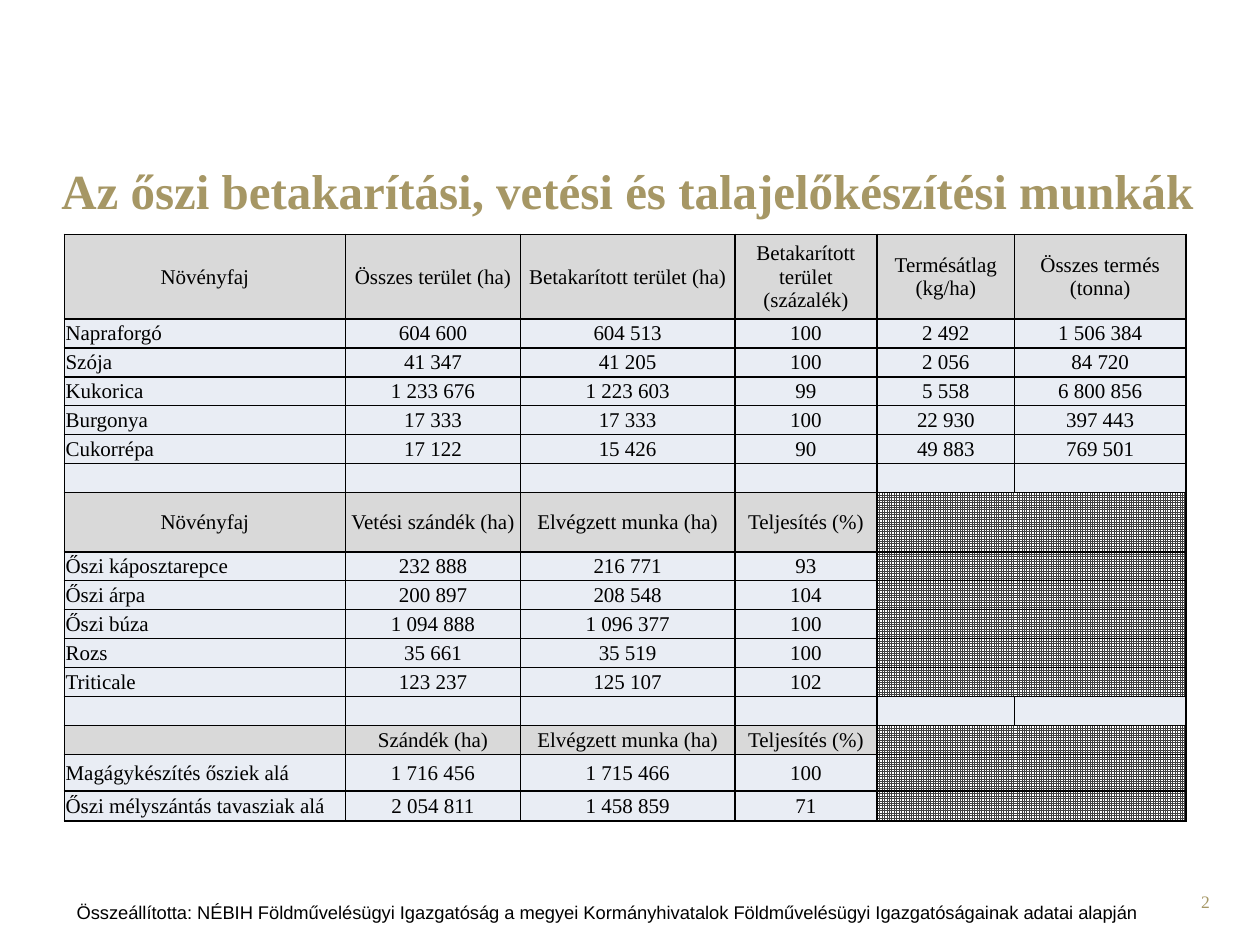
from lxml import etree
from pptx import Presentation
from pptx.dml.color import RGBColor
from pptx.enum import dml, text
from pptx.oxml import ns
from pptx.util import Pt

TITLE = "Az őszi betakarítási, vetési és talajelőkészítési munkák"
SOURCE = ("Összeállította: NÉBIH Földművelésügyi Igazgatóság a megyei Kormányhivatalok "
          "Földművelésügyi Igazgatóságainak adatai alapján")
PAGE_NUMBER = "2"
ROWS = [
    ("header", 48.2, ["Növényfaj", "Összes terület (ha)", "Betakarított terület (ha)",
                      "Betakarított terület (százalék)", "Termésátlag (kg/ha)",
                      "Összes termés (tonna)"]),
    ("data", 16.57, ["Napraforgó", "604 600", "604 513", "100", "2 492", "1 506 384"]),
    ("data", 16.57, ["Szója", "41 347", "41 205", "100", "2 056", "84 720"]),
    ("data", 16.57, ["Kukorica", "1 233 676", "1 223 603", "99", "5 558", "6 800 856"]),
    ("data", 16.57, ["Burgonya", "17 333", "17 333", "100", "22 930", "397 443"]),
    ("data", 16.57, ["Cukorrépa", "17 122", "15 426", "90", "49 883", "769 501"]),
    ("gap", 16.57, []),
    ("header", 33.8, ["Növényfaj", "Vetési szándék (ha)", "Elvégzett munka (ha)", "Teljesítés (%)"]),
    ("data", 16.57, ["Őszi káposztarepce", "232 888", "216 771", "93"]),
    ("data", 16.57, ["Őszi árpa", "200 897", "208 548", "104"]),
    ("data", 16.57, ["Őszi búza", "1 094 888", "1 096 377", "100"]),
    ("data", 16.57, ["Rozs", "35 661", "35 519", "100"]),
    ("data", 16.57, ["Triticale", "123 237", "125 107", "102"]),
    ("gap", 16.57, []),
    ("header", 16.57, ["", "Szándék (ha)", "Elvégzett munka (ha)", "Teljesítés (%)"]),
    ("data", 20.9, ["Magágykészítés ősziek alá", "1 716 456", "1 715 466", "100"]),
    ("data", 17, ["Őszi mélyszántás tavasziak alá", "2 054 811", "1 458 859", "71"]),
]
COLUMN_WIDTHS = [160.6, 100.1, 122.4, 81.4, 78.5, 97.9]

GOLD = RGBColor(0xA6, 0x97, 0x65)
BLACK = RGBColor(0, 0, 0)
WHITE = RGBColor(0xFF, 0xFF, 0xFF)
HATCH = RGBColor(0x40, 0x40, 0x40)
FILLS = {"header": RGBColor(0xD9, 0xD9, 0xD9), "data": RGBColor(0xE9, 0xED, 0xF4),
         "gap": RGBColor(0xE9, 0xED, 0xF4)}
SERIF = "Times New Roman"
ALIGN = text.PP_ALIGN


def write(frame, content, size=12, font=SERIF, color=BLACK, bold=False, align=ALIGN.CENTER):
    frame.word_wrap = True
    paragraph = frame.paragraphs[0]
    paragraph.alignment = align
    if not content:
        end = etree.SubElement(paragraph._p, ns.qn("a:endParaRPr"))
        end.set("sz", str(size * 100))
        return
    run = paragraph.add_run()
    run.text = content
    run.font.size = Pt(size)
    run.font.name = font
    run.font.bold = bold
    run.font.color.rgb = color


def add_label(slide, box, content, anchor=text.MSO_ANCHOR.TOP, **style):
    frame = slide.shapes.add_textbox(*map(Pt, box)).text_frame
    frame.vertical_anchor = anchor
    write(frame, content, **style)


def set_borders(cell, hidden_side):
    properties = cell._tc.get_or_add_tcPr()
    for side in ("lnL", "lnR", "lnT", "lnB"):
        line = etree.SubElement(properties, ns.qn(f"a:{side}"), w=str(Pt(1)))
        if side == hidden_side:
            etree.SubElement(line, ns.qn("a:noFill"))
        else:
            solid = etree.SubElement(line, ns.qn("a:solidFill"))
            etree.SubElement(solid, ns.qn("a:srgbClr"), val=str(BLACK))


def fill_cell(cell, kind, hatched):
    if hatched:
        cell.fill.patterned()
        cell.fill.pattern = dml.MSO_PATTERN.SMALL_GRID
        cell.fill.fore_color.rgb = HATCH
        cell.fill.back_color.rgb = WHITE
    else:
        cell.fill.solid()
        cell.fill.fore_color.rgb = FILLS[kind]


def add_crop_table(slide):
    heights = [height for _, height, _ in ROWS]
    table = slide.shapes.add_table(len(ROWS), len(COLUMN_WIDTHS), Pt(36.8), Pt(134),
                                   Pt(sum(COLUMN_WIDTHS)), Pt(sum(heights))).table
    table.first_row = table.horz_banding = False
    for column, width in zip(table.columns, COLUMN_WIDTHS):
        column.width = Pt(width)
    for row, (kind, height, values) in zip(table.rows, ROWS):
        row.height = Pt(height)
        for index, cell in enumerate(row.cells):
            hatched = kind != "gap" and index >= len(values)
            set_borders(cell, {4: "lnR", 5: "lnL"}[index] if hatched else None)
            fill_cell(cell, kind, hatched)
            cell.margin_left = cell.margin_right = cell.margin_top = Pt(0.7)
            cell.margin_bottom = 0
            cell.vertical_anchor = text.MSO_ANCHOR.MIDDLE
            value = values[index] if index < len(values) else ""
            names_crop = kind == "data" and index == 0
            write(cell.text_frame, value, align=ALIGN.LEFT if names_crop else ALIGN.CENTER)


def main():
    deck = Presentation()
    deck.slide_width, deck.slide_height = Pt(720), Pt(540)
    slide = deck.slides.add_slide(deck.slide_layouts[6])
    add_label(slide, (530.6, 505.4, 167.8, 28.8), PAGE_NUMBER, size=10, color=GOLD,
              align=ALIGN.RIGHT)
    add_crop_table(slide)
    add_label(slide, (-2.9, 88.6, 722.9, 40.3), TITLE, anchor=text.MSO_ANCHOR.MIDDLE,
              size=28, color=GOLD, bold=True)
    add_label(slide, (36.7, 511.2, 652.3, 20.2), SOURCE, size=10.5, font="Arial",
              align=ALIGN.LEFT)
    deck.save("out.pptx")


if __name__ == "__main__":
    main()
